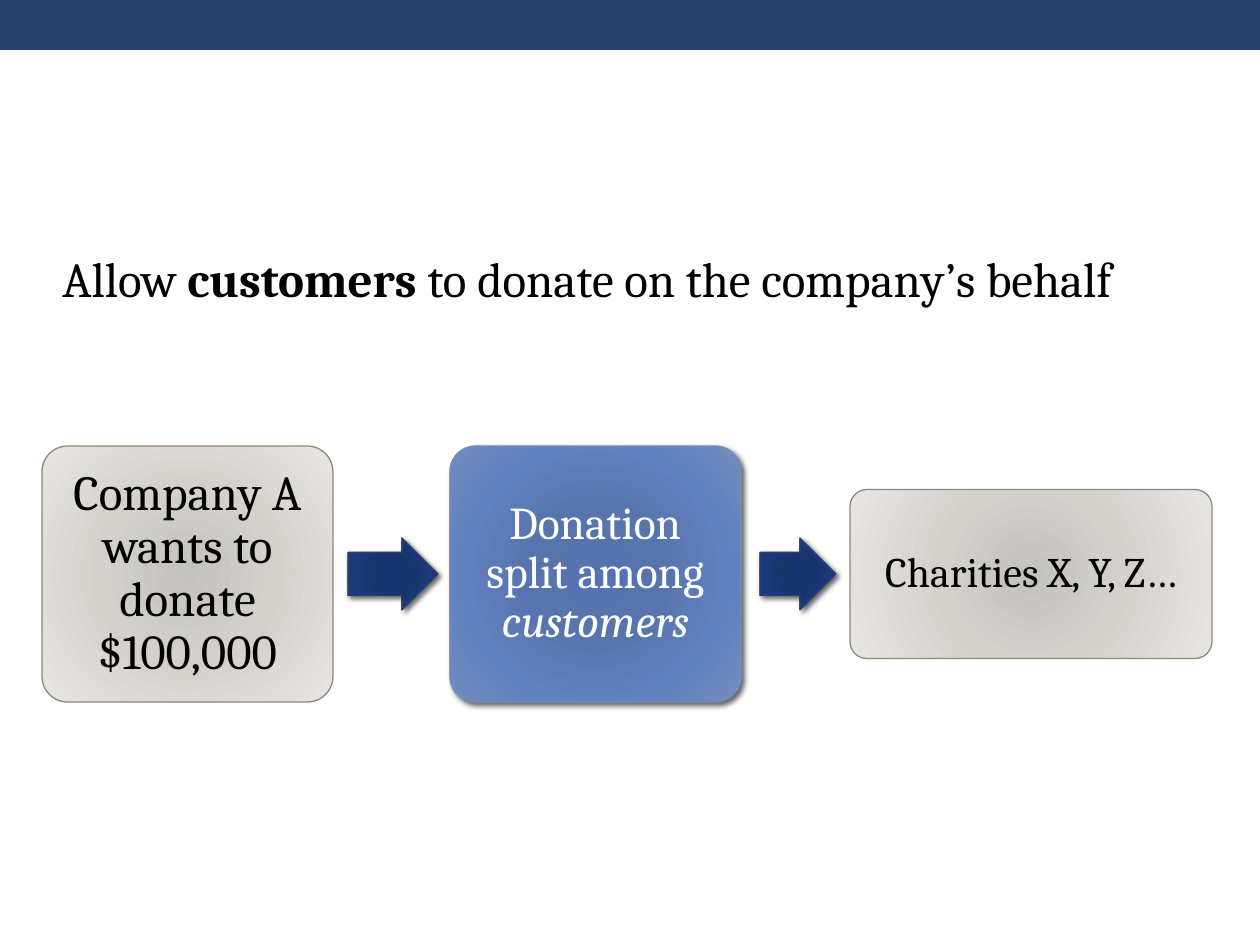
from pptx import Presentation
from pptx.dml.color import RGBColor
from pptx.enum.shapes import MSO_SHAPE as Shape
from pptx.enum.text import MSO_ANCHOR as Anchor, PP_ALIGN as Align
from pptx.oxml import parse_xml
from pptx.oxml.ns import nsdecls
from pptx.util import Pt

EMU_PER_PX = 914400 / 126
NAVY = "294171"
GREY_STOPS = [(0, "C4C2BE"), (45, "D4D1CD"), (100, "E7E6E3")]
BLUE_STOPS = [(0, "5473B0"), (34, "5774AD"), (70, "6181C1"), (100, "748CBC")]
NAVY_STOPS = [(0, "143370"), (34, "17346D"), (70, "193A7A"), (100, NAVY)]


def px(length):
    return round(length * EMU_PER_PX)


def rgb(value):
    return RGBColor.from_string(value)


def radial_gradient(stops):
    """Return a gradFill that spreads from the centre of the shape."""
    stop_xml = "".join(
        f'<a:gs pos="{percent * 1000}"><a:srgbClr val="{color}"/></a:gs>'
        for percent, color in stops)
    return parse_xml(
        f'<a:gradFill {nsdecls("a")} rotWithShape="1"><a:gsLst>{stop_xml}</a:gsLst>'
        '<a:path path="circle"><a:fillToRect l="50000" t="50000" r="50000" b="50000"/>'
        '</a:path></a:gradFill>')


def soft_shadow():
    return parse_xml(
        f'<a:outerShdw {nsdecls("a")} blurRad="38100" dist="25400" dir="2700000" '
        'rotWithShape="0"><a:srgbClr val="000000"><a:alpha val="60000"/></a:srgbClr>'
        '</a:outerShdw>')


class FlowSlide:
    """Draws on one slide in one font, with flow steps centred on one row."""

    font = "Cambria"
    row_center = 574

    def __init__(self, deck):
        self.slide = deck.slides.add_slide(deck.slide_layouts[6])

    def set_text(self, frame, runs, size, color="000000", align=Align.LEFT,
                 anchor=Anchor.TOP, inset=None, spacing=None):
        """Fill a text frame; runs are (text, style) with style "", "bold" or "italic"."""
        frame.word_wrap = True
        frame.vertical_anchor = anchor
        if inset is not None:
            frame.margin_left = frame.margin_right = px(inset)
            frame.margin_top = frame.margin_bottom = px(inset)
        paragraph = frame.paragraphs[0]
        paragraph.alignment = align
        paragraph.line_spacing = spacing
        for text, style in runs:
            run = paragraph.add_run()
            run.text = text
            run.font.name = self.font
            run.font.size = Pt(size)
            run.font.color.rgb = rgb(color)
            run.font.bold = style == "bold"
            run.font.italic = style == "italic"

    def band(self, width, height, color):
        band = self.slide.shapes.add_shape(Shape.RECTANGLE, 0, 0, px(width), px(height))
        band.shadow.inherit = False
        band.fill.solid()
        band.fill.fore_color.rgb = rgb(color)
        band.line.fill.background()

    def statement(self, left, top, width, height, runs, size):
        box = self.slide.shapes.add_textbox(px(left), px(top), px(width), px(height))
        self.set_text(box.text_frame, runs, size)

    def row_shape(self, kind, left, width, height, stops, outline, shadow):
        shape = self.slide.shapes.add_shape(
            kind, px(left), px(self.row_center - height / 2), px(width), px(height))
        shape.shadow.inherit = False
        properties = shape.element.spPr
        properties.insert(2, radial_gradient(stops))
        shape.line.color.rgb = rgb(outline)
        shape.line.width = Pt(0.75)
        if shadow:
            properties.find("{*}effectLst").append(soft_shadow())
        return shape

    def step(self, left, width, height, runs, size, inset, active=False):
        stops, outline, color = ((BLUE_STOPS, "748CBC", "FFFFFF") if active
                                 else (GREY_STOPS, "8E887C", "000000"))
        card = self.row_shape(Shape.ROUNDED_RECTANGLE, left, width, height,
                              stops, outline, active)
        card.adjustments[0] = 0.1
        self.set_text(card.text_frame, runs, size, color=color, align=Align.CENTER,
                      anchor=Anchor.MIDDLE, inset=inset, spacing=0.9)

    def arrow(self, left, width):
        arrow = self.row_shape(Shape.RIGHT_ARROW, left, width, 72, NAVY_STOPS, NAVY, True)
        arrow.adjustments[0] = 0.6
        arrow.adjustments[1] = 0.5


def main():
    deck = Presentation()
    deck.slide_width, deck.slide_height = px(1260), px(945)
    flow = FlowSlide(deck)

    flow.band(1260, 50, NAVY)
    flow.step(42, 291, 256, [("Company A wants to donate $100,000", "")], 28, 15)
    flow.arrow(348, 90)
    flow.step(450, 291, 256, [("Donation split among ", ""), ("customers", "italic")],
              26, 14, active=True)
    flow.arrow(760, 76)
    flow.step(850, 362, 169, [("Charities X, Y, Z…", "")], 24, 13)
    flow.statement(50, 242, 1152, 72, [("Allow ", ""), ("customers", "bold"),
                   (" to donate on the company’s behalf", "")], 28)

    deck.save("out.pptx")


if __name__ == "__main__":
    main()
